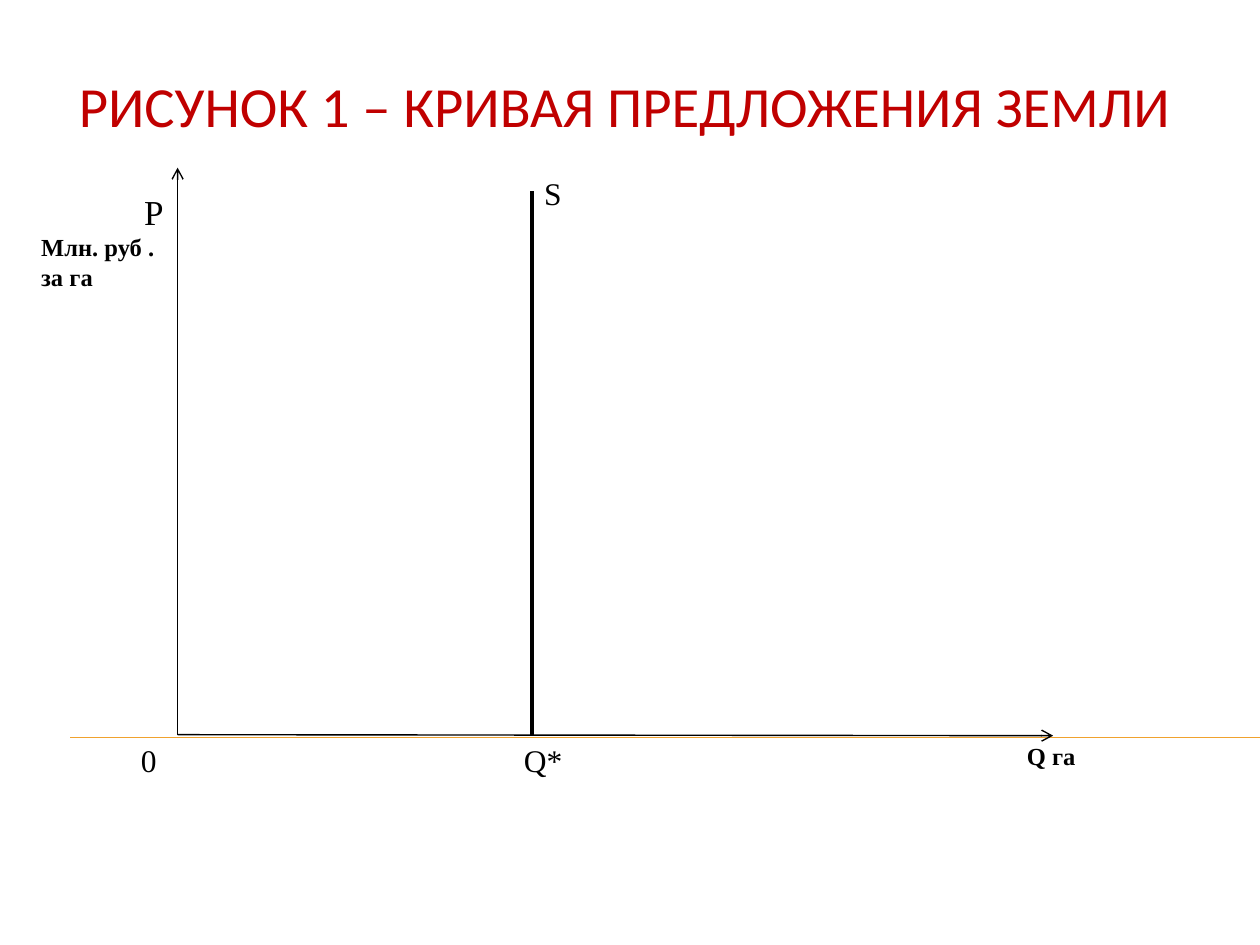
from lxml.etree import SubElement
from pptx import Presentation
from pptx.dml.color import RGBColor
from pptx.enum.shapes import MSO_CONNECTOR
from pptx.enum.text import MSO_ANCHOR, PP_ALIGN
from pptx.oxml.ns import qn
from pptx.util import Cm, Pt


def color(value):
    return RGBColor.from_string(value)


class SlideBuilder:
    font = "Times New Roman"
    title_font = "Calibri"
    black = "000000"
    red = "C00000"
    orange = "F0A22E"

    def __init__(self, slide):
        self.slide = slide

    def format_paragraph(self, paragraph, size, name, value, bold=False):
        for run in paragraph.runs:
            run.font.size = Pt(size)
            run.font.name = name
            run.font.bold = bold
            run.font.color.rgb = color(value)

    def title(self, text, left, top, width, height):
        shape = self.slide.shapes.title
        shape.left, shape.top = Cm(left), Cm(top)
        shape.width, shape.height = Cm(width), Cm(height)
        text_frame = shape.text_frame
        text_frame.text = text
        text_frame.vertical_anchor = MSO_ANCHOR.MIDDLE
        text_frame.margin_left = Cm(0.75)
        paragraph = text_frame.paragraphs[0]
        paragraph.alignment = PP_ALIGN.LEFT
        self.format_paragraph(paragraph, 32.4, self.title_font, self.red)

    def line(self, start, end, width, value=black, arrow=False):
        connector = self.slide.shapes.add_connector(
            MSO_CONNECTOR.STRAIGHT, *(Cm(length) for length in (*start, *end)))
        connector.line.width = Pt(width)
        connector.line.color.rgb = color(value)
        properties = connector._element.spPr
        if arrow:
            SubElement(properties.find(qn("a:ln")), qn("a:tailEnd"), type="arrow")
        SubElement(properties, qn("a:effectLst"))

    def label(self, left, top, width, height, *lines, wrap=False):
        shape = self.slide.shapes.add_textbox(
            Cm(left), Cm(top), Cm(width), Cm(height))
        text_frame = shape.text_frame
        text_frame.word_wrap = wrap
        text_frame.text = "\n".join(text for text, *_ in lines)
        for paragraph, (_, size, bold, alignment) in zip(text_frame.paragraphs, lines):
            paragraph.alignment = alignment
            self.format_paragraph(paragraph, size, self.font, self.black, bold)


def main():
    presentation = Presentation()
    presentation.slide_width, presentation.slide_height = Cm(25.4), Cm(19.05)
    slide = presentation.slides.add_slide(presentation.slide_layouts[5])
    builder = SlideBuilder(slide)

    origin_x, origin_y = 3.58, 14.81
    axis_top, supply_x = 3.38, 10.72
    label_height = 0.86
    left, right = PP_ALIGN.LEFT, PP_ALIGN.RIGHT

    builder.line((1.42, 14.86), (25.4, 14.86), 0.75, builder.orange)
    builder.line((origin_x, origin_y), (21.23, 14.83), 0.79, arrow=True)
    builder.line((origin_x, origin_y), (origin_x, axis_top), 0.79, arrow=True)
    builder.line((supply_x, origin_y), (supply_x, 3.86), 2.25)

    builder.label(0.58, 3.71, 2.97, 2.31, ("Р", 20, False, right),
                  ("Млн. руб . за га", 14, True, left), wrap=True)
    builder.label(supply_x, axis_top, 0.86, label_height, ("S", 18, False, left))
    for text, x, width, size, bold in (
            ("0", 2.59, 0.84, 18, False),
            ("Q*", 10.31, 1.3, 18, False),
            ("Q га", 20.45, 1.5, 14, True)):
        builder.label(x, origin_y, width, label_height, (text, size, bold, left))

    builder.title("РИСУНОК 1 – КРИВАЯ ПРЕДЛОЖЕНИЯ ЗЕМЛИ", 0.84, 1.27, 24.13, 1.7)
    presentation.save("out.pptx")


if __name__ == "__main__":
    main()
